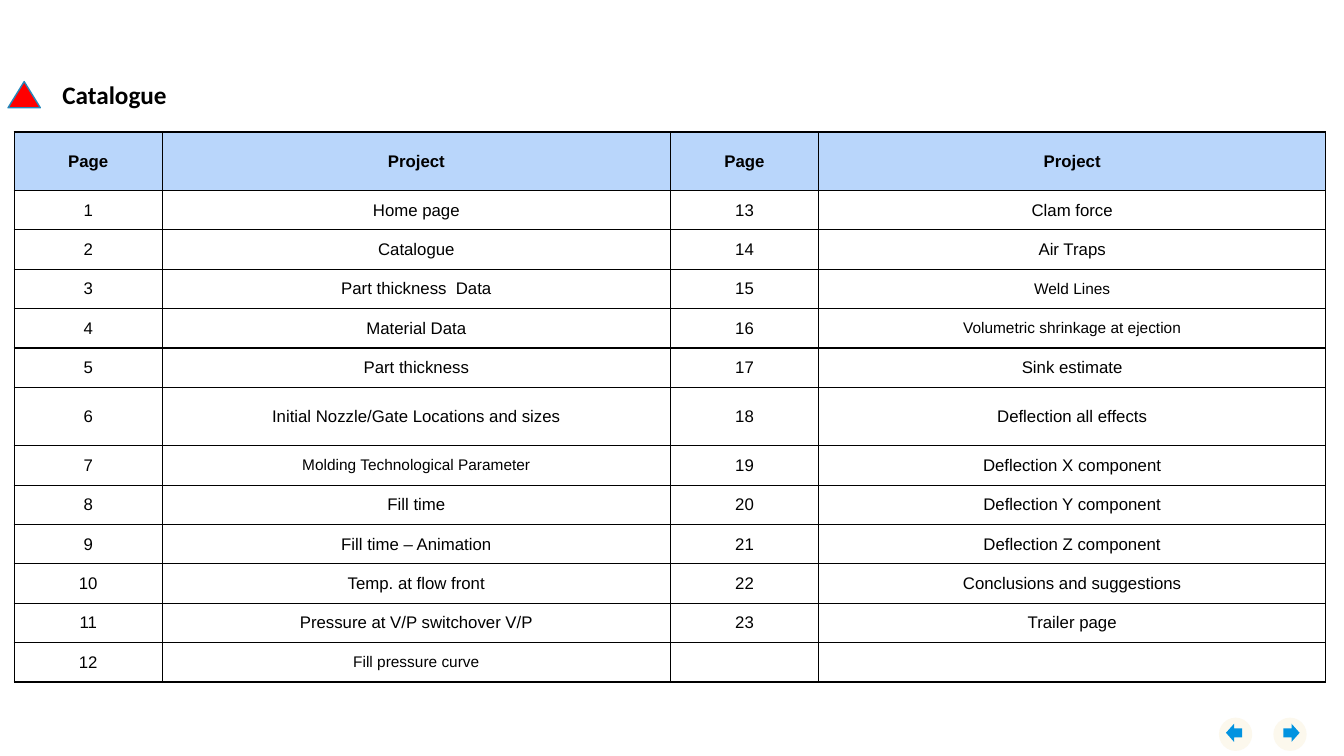
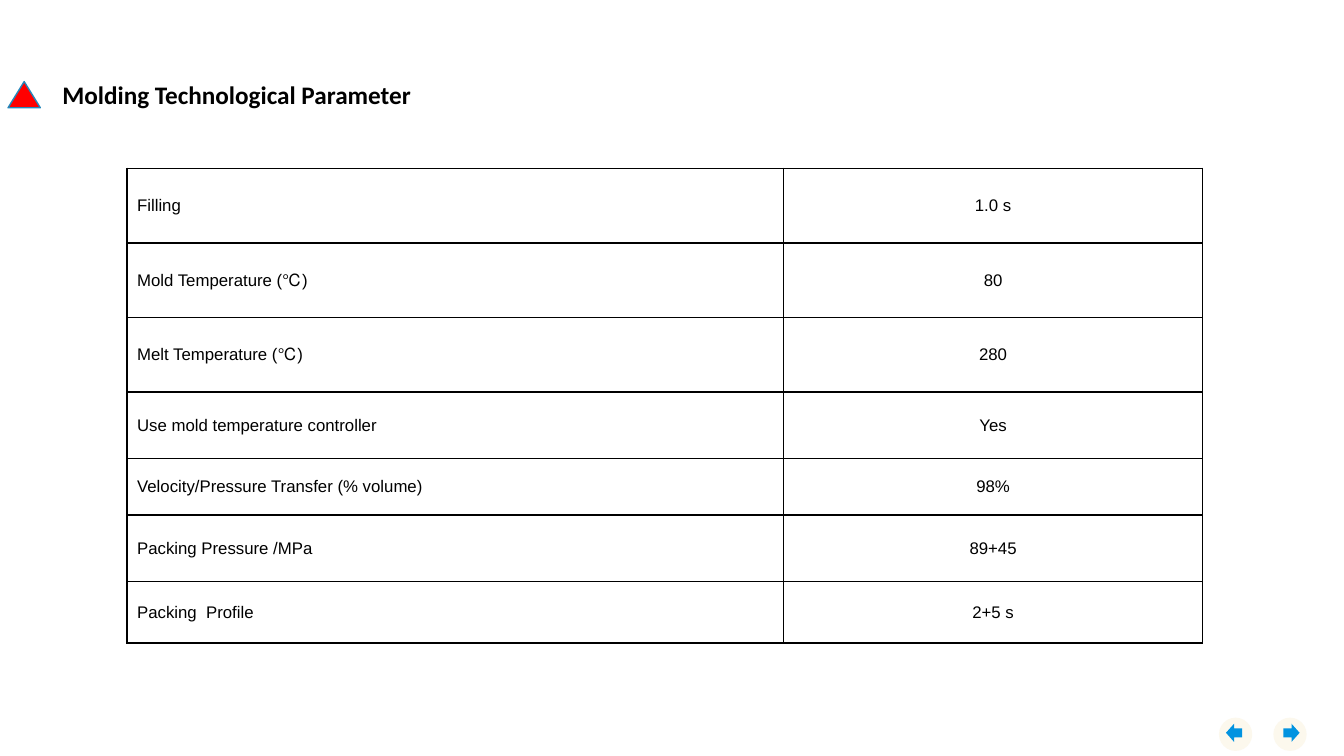
"""Build the catalogue and molding parameter slides of a mold flow report."""
from lxml.etree import SubElement
from pptx import Presentation
from pptx.dml.color import RGBColor
from pptx.enum.shapes import MSO_SHAPE as SHAPE
from pptx.enum.text import MSO_ANCHOR as ANCHOR, MSO_AUTO_SIZE as AUTO, PP_ALIGN as ALIGN
from pptx.oxml.ns import qn
from pptx.util import Inches, Pt

BLACK = RGBColor(0x00, 0x00, 0x00)
RED = RGBColor(0xFF, 0x00, 0x00)
EDGE_BLUE = RGBColor(0x24, 0x87, 0xBB)
ARROW_BLUE = RGBColor(0x02, 0x93, 0xE0)
CREAM = RGBColor(0xFC, 0xF8, 0xED)
HEADER_BLUE = RGBColor(0xB9, 0xD6, 0xFB)

TITLE_FONT = "Calibri"
TABLE_FONT = "Arial"

PROJECTS = [
    "Home page", "Catalogue", "Part thickness  Data", "Material Data",
    "Part thickness", "Initial Nozzle/Gate Locations and sizes",
    "Molding Technological Parameter", "Fill time", "Fill time – Animation",
    "Temp. at flow front", "Pressure at V/P switchover V/P",
    "Fill pressure curve", "Clam force", "Air Traps", "Weld Lines",
    "Volumetric shrinkage at ejection", "Sink estimate",
    "Deflection all effects", "Deflection X component",
    "Deflection Y component", "Deflection Z component",
    "Conclusions and suggestions", "Trailer page",
]
SMALL_PROJECTS = {
    "Molding Technological Parameter", "Fill pressure curve", "Weld Lines",
    "Volumetric shrinkage at ejection",
}
PARAMETERS = [
    ("Filling", "1.0 s"),
    ("Mold Temperature (℃)", "80"),
    ("Melt Temperature (℃)", "280"),
    ("Use mold temperature controller", "Yes"),
    ("Velocity/Pressure Transfer (% volume)", "98%"),
    ("Packing Pressure /MPa", "89+45"),
    ("Packing  Profile", "2+5 s"),
]


def set_font(p, name, size, bold=False):
    """Set the font of a whole paragraph."""
    p.font.name = name
    p.font.size = Pt(size)
    p.font.bold = bold
    p.font.color.rgb = BLACK


def add_shape(s, kind, left, top, width, height, fill, line=None):
    """Add a flat preset shape, outlined only if a line colour is given."""
    sp = s.shapes.add_shape(kind, Inches(left), Inches(top), Inches(width), Inches(height))
    sp.shadow.inherit = False
    sp.fill.solid()
    sp.fill.fore_color.rgb = fill
    if line is None:
        sp.line.fill.background()
    else:
        sp.line.color.rgb = line
        sp.line.width = Pt(1)


def add_title(s, text):
    """Add the slide title with its red triangle marker."""
    tf = s.shapes.add_textbox(Inches(0.52), Inches(0.74), Inches(6.81), Inches(0.4)).text_frame
    tf.word_wrap = True
    tf.auto_size = AUTO.SHAPE_TO_FIT_TEXT
    p = tf.paragraphs[0]
    p.text = text
    set_font(p, TITLE_FONT, 18, bold=True)
    add_shape(s, SHAPE.ISOSCELES_TRIANGLE, 0.08, 0.81, 0.32, 0.26, RED, EDGE_BLUE)


def add_navigation(s):
    """Add the back and forward arrows at the bottom right."""
    for kind, disc_left, arrow_left in (
        (SHAPE.RIGHT_ARROW, 12.63, 12.73),
        (SHAPE.LEFT_ARROW, 12.09, 12.16),
    ):
        add_shape(s, SHAPE.OVAL, disc_left, 7.12, 0.33, 0.33, CREAM)
        add_shape(s, kind, arrow_left, 7.18, 0.16, 0.18, ARROW_BLUE)


def new_slide(prs, title):
    """Add a blank slide with the shared title and navigation."""
    s = prs.slides.add_slide(prs.slide_layouts[6])
    add_navigation(s)
    add_title(s, title)
    return s


def add_borders(cell):
    """Draw a thin black line on all four sides of a cell."""
    tc_pr = cell._tc.get_or_add_tcPr()
    for side in ("lnL", "lnR", "lnT", "lnB"):
        ln = SubElement(tc_pr, qn(f"a:{side}"), w=str(Pt(1)))
        fill = SubElement(ln, qn("a:solidFill"))
        SubElement(fill, qn("a:srgbClr"), val=str(BLACK))


def fill_cell(cell, text, align, size=12, header=False):
    """Write and style one table cell."""
    cell.vertical_anchor = ANCHOR.MIDDLE
    add_borders(cell)
    if header:
        cell.fill.solid()
        cell.fill.fore_color.rgb = HEADER_BLUE
    else:
        cell.fill.background()
    p = cell.text_frame.paragraphs[0]
    p.text = text
    p.alignment = align
    set_font(p, TABLE_FONT, size, bold=header)


def add_table(s, left, top, widths, heights):
    """Add an unstyled table with the given column widths and row heights."""
    table = s.shapes.add_table(
        len(heights), len(widths), Inches(left), Inches(top),
        Inches(sum(widths)), Inches(sum(heights)),
    ).table
    table.first_row = table.horz_banding = False
    for col, width in zip(table.columns, widths):
        col.width = Inches(width)
    for row, height in zip(table.rows, heights):
        row.height = Inches(height)
    return table


def catalogue_slide(prs):
    """Build the catalogue, with its pages in two halves side by side."""
    s = new_slide(prs, "Catalogue")
    half = (len(PROJECTS) + 1) // 2
    tall = 0.58
    heights = [(5.46 - 2 * tall) / (half - 1)] * (half + 1)
    heights[0] = heights[6] = tall
    table = add_table(s, 0.14, 1.31, [1.47, 5.04, 1.47, 5.03], heights)
    entries = [(str(n), name) for n, name in enumerate(PROJECTS, 1)]
    entries += [("", "")] * (2 * half - len(entries))
    for col, text in enumerate(("Page", "Project") * 2):
        fill_cell(table.cell(0, col), text, ALIGN.CENTER, header=True)
    for i, entry in enumerate(entries):
        block, row = divmod(i, half)
        for j, text in enumerate(entry):
            size = 11 if text in SMALL_PROJECTS else 12
            fill_cell(table.cell(row + 1, 2 * block + j), text, ALIGN.CENTER, size)


def parameter_slide(prs):
    """Build the table of molding parameters."""
    s = new_slide(prs, "Molding Technological Parameter")
    heights = [0.74, 0.74, 0.74, 0.66, 0.56, 0.66, 0.61]
    table = add_table(s, 1.26, 1.67, [6.51, 4.16], heights)
    for row, (name, value) in enumerate(PARAMETERS):
        fill_cell(table.cell(row, 0), name, ALIGN.LEFT)
        fill_cell(table.cell(row, 1), value, ALIGN.CENTER)


def main():
    """Build and save the presentation."""
    prs = Presentation()
    prs.slide_width = Inches(13.33)
    prs.slide_height = Inches(7.5)
    catalogue_slide(prs)
    parameter_slide(prs)
    prs.save("out.pptx")


if __name__ == "__main__":
    main()
